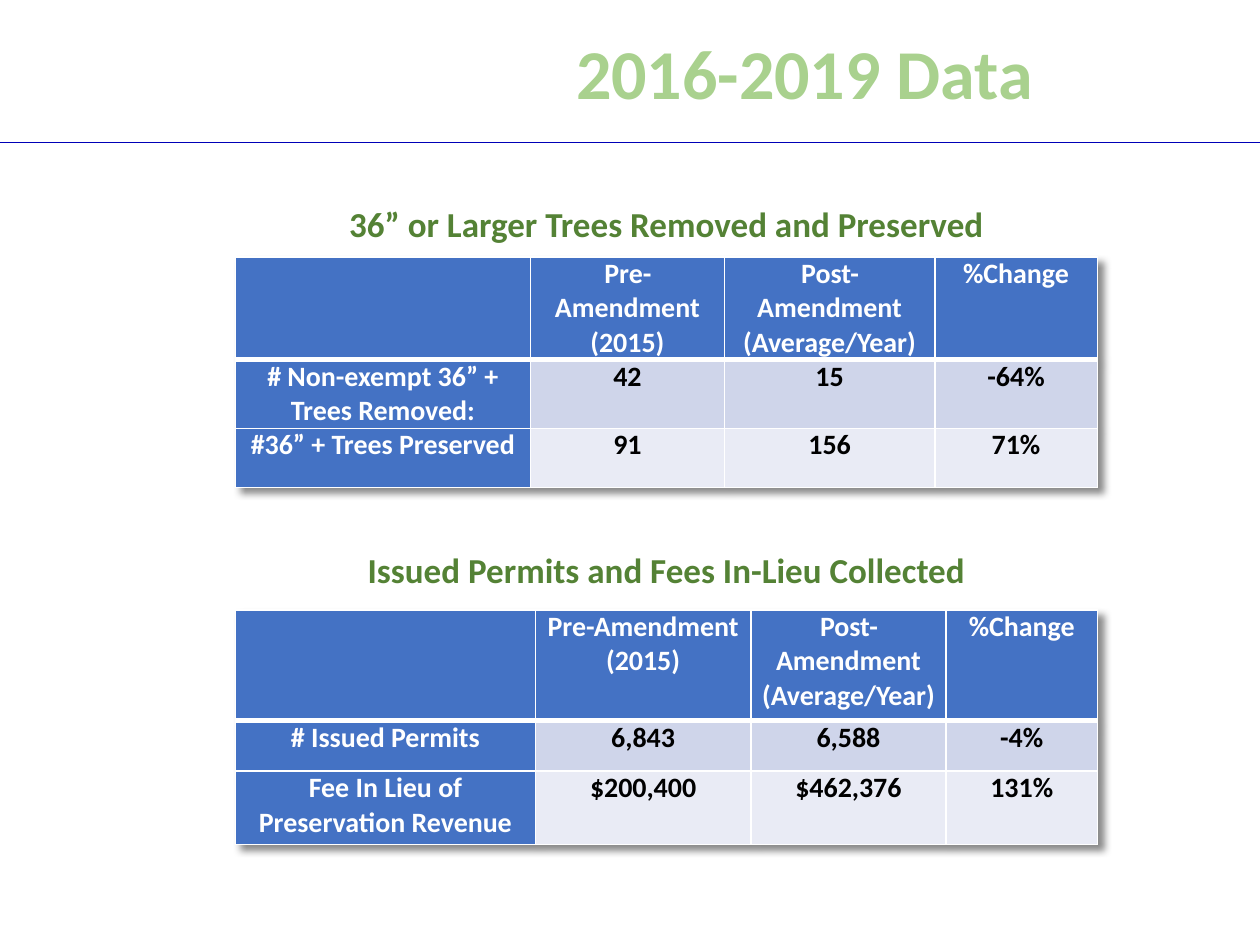
from dataclasses import dataclass

from lxml import etree
from pptx import Presentation
from pptx import util as u
from pptx.dml.color import RGBColor
from pptx.enum import shapes, text
from pptx.oxml import parse_xml
from pptx.oxml.ns import qn

FONT = "Calibri"
WHITE, BLACK = "FFFFFF", "000000"
HEADER_BLUE, RULE_BLUE = "4472C4", "0000B7"
BANDS = ["CFD5EA", "E9EBF5"]
TITLE_GREEN, HEADING_GREEN = "A9D18E", "548235"
LEFT, WIDTH = 134.6, 492.5
HEADER = ["", "Pre-Amendment (2015)", "Post-Amendment (Average/Year)", "%Change"]
SHADOW = (
    '<a:effectLst xmlns:a="http://schemas.openxmlformats.org/drawingml/2006/main">'
    '<a:outerShdw blurRad="50800" dist="50800" dir="2700000" algn="tl" rotWithShape="0">'
    '<a:srgbClr val="000000"><a:alpha val="45000"/></a:srgbClr>'
    "</a:outerShdw></a:effectLst>"
)


@dataclass
class DataTable:
    heading: str
    heading_top: float
    top: float
    height: float
    columns: list[float]
    rows: list[float]
    data: list[list[str]]


TABLES = [
    DataTable(
        "36” or Larger Trees Removed and Preserved", 112, 146.9, 130.3,
        [168.5, 110.9, 120.2, 92.9], [53.3, 24.5, 33.8],
        [["# Non-exempt 36” + Trees Removed:", "42", "15", "-64%"],
         ["#36” + Trees Preserved", "91", "156", "71%"]],
    ),
    DataTable(
        "Issued Permits and Fees In-Lieu Collected", 309.6, 348.5, 133.9,
        [171.4, 123.1, 111.6, 86.4], [63.4, 28.8, 41.8],
        [["# Issued Permits", "6,843", "6,588", "-4%"],
         ["Fee In Lieu of Preservation Revenue", "$200,400", "$462,376", "131%"]],
    ),
]


def color(value: str) -> RGBColor:
    return RGBColor.from_string(value)


def write(frame, words: str, *, size: float, fill: str) -> None:
    """Put one bold, centred paragraph in a text frame."""
    para = frame.paragraphs[0]
    para.alignment = text.PP_ALIGN.CENTER
    span = para.add_run()
    span.text = words
    span.font.name = FONT
    span.font.size = u.Pt(size)
    span.font.bold = True
    span.font.color.rgb = color(fill)


def add_borders(cell, bottom: float) -> None:
    """Draw white cell borders; they must precede the fill in the XML."""
    properties = cell._tc.get_or_add_tcPr()
    for index, (side, width) in enumerate(
        [("lnL", 1), ("lnR", 1), ("lnT", 1), ("lnB", bottom)]
    ):
        line = etree.Element(qn(f"a:{side}"), w=str(u.Pt(width)))
        fill = etree.SubElement(line, qn("a:solidFill"))
        etree.SubElement(fill, qn("a:srgbClr"), val=WHITE)
        properties.insert(index, line)


def format_cell(cell, words: str, row: int, column: int) -> None:
    is_label = row == 0 or column == 0
    cell.margin_left = cell.margin_right = u.Pt(5)
    cell.margin_top = cell.margin_bottom = 0
    cell.fill.solid()
    cell.fill.fore_color.rgb = color(HEADER_BLUE if is_label else BANDS[row - 1])
    add_borders(cell, bottom=3 if row == 0 else 1)
    if words:
        write(cell.text_frame, words, size=16, fill=WHITE if is_label else BLACK)


def add_data_table(page, item: DataTable) -> None:
    grid = [HEADER, *item.data]
    frame = page.shapes.add_table(
        len(grid), len(HEADER), u.Pt(LEFT), u.Pt(item.top), u.Pt(WIDTH), u.Pt(item.height)
    )
    table = frame.table
    for column, width in zip(table.columns, item.columns):
        column.width = u.Pt(width)
    for row, height in zip(table.rows, item.rows):
        row.height = u.Pt(height)
    frame.height = u.Pt(item.height)
    table._tbl.tblPr.insert(0, parse_xml(SHADOW))
    for r, values in enumerate(grid):
        for c, words in enumerate(values):
            format_cell(table.cell(r, c), words, r, c)


def add_heading(page, item: DataTable) -> None:
    box = page.shapes.add_textbox(
        u.Pt(LEFT), u.Pt(item.heading_top), u.Pt(WIDTH), u.Pt(31.5)
    )
    box.text_frame.word_wrap = True
    write(box.text_frame, item.heading, size=20, fill=HEADING_GREEN)


def add_rule(page, top: float, width: float) -> None:
    rule = page.shapes.add_connector(
        shapes.MSO_CONNECTOR.STRAIGHT, 0, u.Pt(top), u.Pt(width), u.Pt(top)
    )
    rule.line.color.rgb = color(RULE_BLUE)
    rule.line.width = u.Pt(0.5)
    etree.SubElement(rule._element.spPr, qn("a:effectLst"))


def format_title(page) -> None:
    title = page.shapes.title
    title.left, title.top = u.Pt(199.4), u.Pt(13)
    title.width, title.height = u.Pt(520.6), u.Pt(55.4)
    title.text_frame.vertical_anchor = text.MSO_ANCHOR.TOP
    write(title.text_frame, "2016-2019 Data", size=40, fill=TITLE_GREEN)


def main() -> None:
    deck = Presentation()
    deck.slide_width, deck.slide_height = u.Pt(720), u.Pt(540)
    page = deck.slides.add_slide(deck.slide_layouts[5])
    add_rule(page, top=81.4, width=720)
    format_title(page)
    for item in TABLES:
        add_data_table(page, item)
        add_heading(page, item)
    deck.save("out.pptx")


if __name__ == "__main__":
    main()
